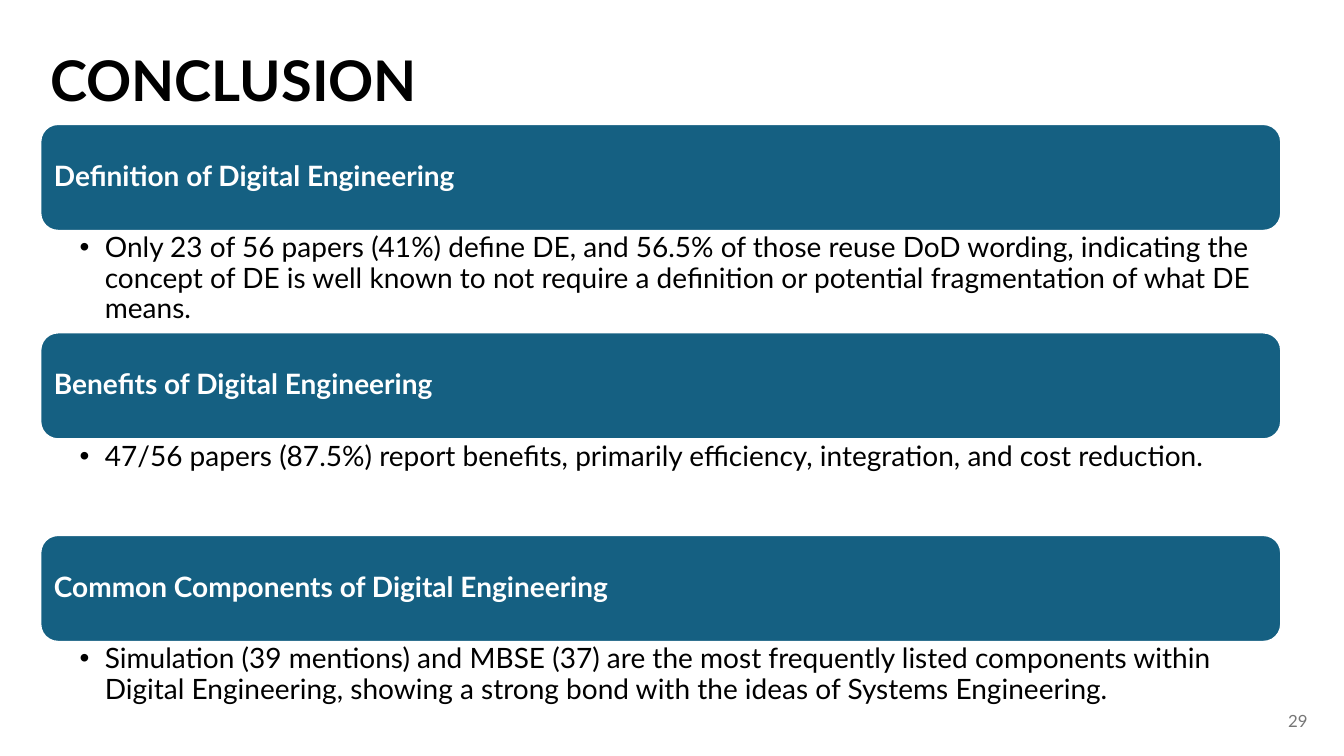
from dataclasses import dataclass

from lxml.etree import SubElement
from pptx import Presentation
from pptx.dml.color import RGBColor
from pptx.enum.shapes import MSO_SHAPE
from pptx.enum.text import MSO_ANCHOR, PP_ALIGN
from pptx.oxml.ns import qn
from pptx.util import Pt

# Content
TITLE = "CONCLUSION"
PAGE_NUMBER = "29"
# heading, finding, height of the finding
SECTIONS = [
    ("Definition of Digital Engineering",
     "Only 23 of 56 papers (41%) define DE, and 56.5% of those reuse DoD wording, "
     "indicating the concept of DE is well known to not require a definition or "
     "potential fragmentation of what DE means.", 72.6),
    ("Benefits of Digital Engineering",
     "47/56 papers (87.5%) report benefits, primarily efficiency, integration, "
     "and cost reduction.", 68.4),
    ("Common Components of Digital Engineering",
     "Simulation (39 mentions) and MBSE (37) are the most frequently listed components "
     "within Digital Engineering, showing a strong bond with the ideas of Systems "
     "Engineering.", 68.4),
]


@dataclass(frozen=True)
class Theme:
    font: str = "Lato"
    black: RGBColor = RGBColor(0x00, 0x00, 0x00)
    white: RGBColor = RGBColor(0xFF, 0xFF, 0xFF)
    blue: RGBColor = RGBColor(0x15, 0x60, 0x82)
    grey: RGBColor = RGBColor(0x76, 0x76, 0x76)
    title_size: float = 40
    text_size: float = 20
    number_size: float = 12


THEME = Theme()
LEFT, WIDTH = 28.8, 886.3
FIRST_TOP, HEADING_HEIGHT = 88.6, 76.3
BULLET_INDENT = 18


def write(shape, text, size, color, bold=False, insets=(7.2, 3.6, 7.2, 3.6),
          anchor=MSO_ANCHOR.TOP, spacing=0.9, bullet=False):
    frame = shape.text_frame
    sides = ("margin_left", "margin_top", "margin_right", "margin_bottom")
    frame_format = dict(zip(sides, map(Pt, insets)))
    frame_format |= {"word_wrap": True, "vertical_anchor": anchor}
    for name, value in frame_format.items():
        setattr(frame, name, value)
    frame.text = text
    paragraph = frame.paragraphs[0]
    paragraph_format = {"alignment": PP_ALIGN.LEFT, "line_spacing": spacing,
                        "space_before": Pt(0)}
    for name, value in paragraph_format.items():
        setattr(paragraph, name, value)
    if bullet:
        properties = paragraph._p.get_or_add_pPr()
        properties.set("marL", str(Pt(BULLET_INDENT)))
        properties.set("indent", str(-Pt(BULLET_INDENT)))
        SubElement(properties, qn("a:buFont")).set("typeface", "Arial")
        SubElement(properties, qn("a:buChar")).set("char", "•")
    font = paragraph.runs[0].font
    font_format = {"name": THEME.font, "size": Pt(size), "bold": bold}
    for name, value in font_format.items():
        setattr(font, name, value)
    font.color.rgb = color


def main():
    deck = Presentation()
    deck.slide_width, deck.slide_height = Pt(960), Pt(540)
    slide = deck.slides.add_slide(deck.slide_layouts[5])
    shapes = slide.shapes

    # Title
    title = shapes.title
    title_place = {"left": 28.8, "top": 34.6, "width": 661.7, "height": 40.3}
    for name, value in title_place.items():
        setattr(title, name, Pt(value))
    write(title, TITLE, THEME.title_size, THEME.black, bold=True)

    # Sections: a heading bar with its finding below, stacked without gaps
    top = FIRST_TOP
    for heading, finding, finding_height in SECTIONS:
        bar = shapes.add_shape(MSO_SHAPE.ROUNDED_RECTANGLE, Pt(LEFT), Pt(top),
                               Pt(WIDTH), Pt(HEADING_HEIGHT))
        bar.shadow.inherit = False
        bar.fill.solid()
        bar.fill.fore_color.rgb = THEME.blue
        bar.line.color.rgb = THEME.white
        bar.line.width = Pt(1.5)
        # The rounded outline adds about 3.7 pt to the insets of its text
        write(bar, heading, THEME.text_size, THEME.white, bold=True,
              insets=(6, 2, 6, 2), anchor=MSO_ANCHOR.MIDDLE)
        top += HEADING_HEIGHT

        note = shapes.add_textbox(Pt(LEFT), Pt(top), Pt(WIDTH), Pt(finding_height))
        write(note, finding, THEME.text_size, THEME.black,
              insets=(28.1, 2, 11.5, 2), bullet=True)
        top += finding_height

    # Page number
    number = shapes.add_textbox(Pt(913), Pt(504), Pt(43), Pt(21.6))
    write(number, PAGE_NUMBER, THEME.number_size, THEME.grey, spacing=1.0)

    deck.save("out.pptx")


if __name__ == "__main__":
    main()
